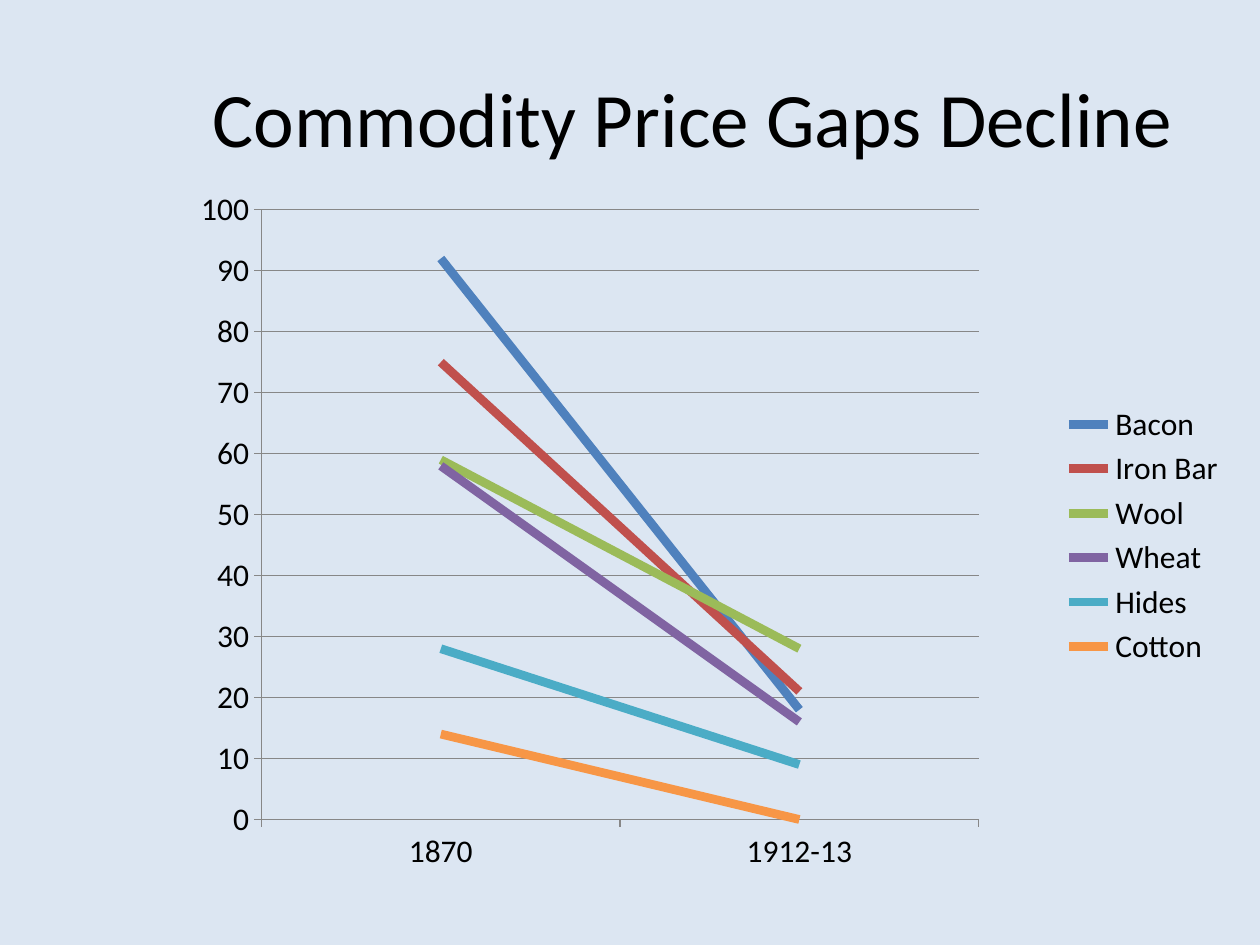
from lxml import etree
from pptx import Presentation
from pptx.chart.data import CategoryChartData
from pptx.dml.color import RGBColor
from pptx.enum.chart import XL_CHART_TYPE, XL_LEGEND_POSITION, XL_TICK_MARK
from pptx.enum.text import MSO_ANCHOR, PP_ALIGN
from pptx.oxml.ns import qn
from pptx.util import Pt

LINE_CHART = XL_CHART_TYPE.LINE
LEGEND_RIGHT = XL_LEGEND_POSITION.RIGHT
TICK_OUTSIDE = XL_TICK_MARK.OUTSIDE
TICK_NONE = XL_TICK_MARK.NONE
MIDDLE = MSO_ANCHOR.MIDDLE
CENTER = PP_ALIGN.CENTER

BACKGROUND = RGBColor(0xDC, 0xE6, 0xF2)
BLACK = RGBColor(0x00, 0x00, 0x00)
GREY = RGBColor(0x87, 0x87, 0x87)

FONT = "Calibri"
TITLE_FORMAT = {"name": FONT, "size": Pt(44), "bold": False}
CHART_FORMAT = {"name": FONT, "size": Pt(18), "bold": False}

YEARS = ["1870", "1912-13"]
# Commodity, price gap in each period, line colour
COMMODITIES = [
    ("Bacon", (92, 18), RGBColor(0x4F, 0x81, 0xBD)),
    ("Iron Bar", (75, 21), RGBColor(0xC0, 0x50, 0x4D)),
    ("Wool ", (59, 28), RGBColor(0x9B, 0xBB, 0x59)),
    ("Wheat ", (58, 16), RGBColor(0x80, 0x64, 0xA2)),
    ("Hides", (28, 9), RGBColor(0x4B, 0xAC, 0xC6)),
    ("Cotton", (14, 0), RGBColor(0xF7, 0x96, 0x46)),
]
# Plot area as fractions of the chart
PLOT_LAYOUT = {"layoutTarget": "inner", "xMode": "edge", "yMode": "edge",
               "x": 0.06, "y": 0.03, "w": 0.69, "h": 0.88}


def format_font(font, values):
    for attribute, value in values.items():
        setattr(font, attribute, value)
    font.color.rgb = BLACK


def format_line(line, color, width):
    line.color.rgb = color
    line.width = width


def add_title(slide, text):
    title = slide.shapes.title
    place = {"left": Pt(108), "top": Pt(21.6), "width": Pt(576), "height": Pt(90.7)}
    for attribute, value in place.items():
        setattr(title, attribute, value)
    title.text_frame.text = text
    title.text_frame.vertical_anchor = MIDDLE
    heading = title.text_frame.paragraphs[0]
    heading.alignment = CENTER
    format_font(heading.runs[0].font, TITLE_FORMAT)


def set_plot_layout(chart):
    plot_area = chart.plots[0]._element.getparent()
    for old_layout in plot_area.findall(qn("c:layout")):
        plot_area.remove(old_layout)
    layout = etree.Element(qn("c:layout"))
    manual = etree.SubElement(layout, qn("c:manualLayout"))
    for tag, value in PLOT_LAYOUT.items():
        etree.SubElement(manual, qn("c:" + tag)).set("val", str(value))
    plot_area.insert(0, layout)


def format_axes(chart):
    for axis in (chart.category_axis, chart.value_axis):
        axis.major_tick_mark = TICK_OUTSIDE
        axis.minor_tick_mark = TICK_NONE
        format_line(axis.format.line, GREY, Pt(0.75))
    prices = chart.value_axis
    prices.minimum_scale, prices.maximum_scale, prices.major_unit = 0, 100, 10
    prices.has_major_gridlines = True
    format_line(prices.major_gridlines.format.line, GREY, Pt(0.75))


def add_price_chart(slide):
    data = CategoryChartData()
    data.categories = YEARS
    for commodity, gaps, _ in COMMODITIES:
        data.add_series(commodity, gaps)
    chart = slide.shapes.add_chart(
        LINE_CHART, Pt(113.8), Pt(108), Pt(594), Pt(396), data).chart
    chart.has_title = False
    format_font(chart.font, CHART_FORMAT)

    # Legend to the right of the plot
    chart.has_legend = True
    chart.legend.position = LEGEND_RIGHT
    chart.legend.include_in_layout = False

    # One thick line per commodity
    chart.plots[0].vary_by_categories = False
    for series, (_, _, color) in zip(chart.plots[0].series, COMMODITIES):
        series.smooth = False
        format_line(series.format.line, color, Pt(5))

    format_axes(chart)
    set_plot_layout(chart)


def main():
    presentation = Presentation()
    presentation.slide_width, presentation.slide_height = Pt(720), Pt(540)
    slide = presentation.slides.add_slide(presentation.slide_layouts[5])
    slide.background.fill.solid()
    slide.background.fill.fore_color.rgb = BACKGROUND
    add_title(slide, "Commodity Price Gaps Decline")
    add_price_chart(slide)
    presentation.save("out.pptx")


if __name__ == "__main__":
    main()
